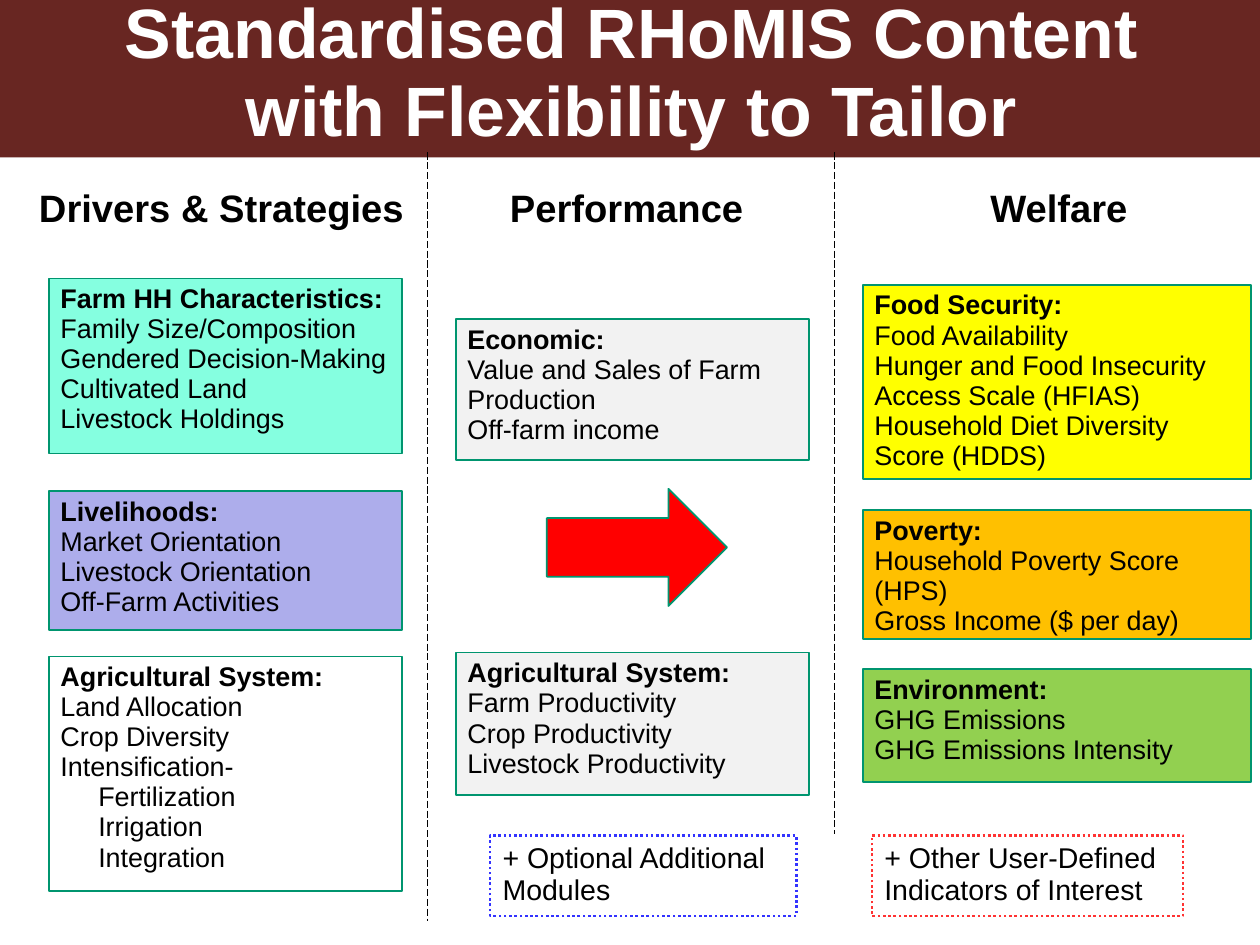
import pptx
import pptx.util
import pptx.dml.color
import pptx.enum.dml
import pptx.enum.shapes
import pptx.enum.text
import pptx.oxml.ns
import lxml.etree

Inches = pptx.util.Inches
SHAPES = pptx.enum.shapes.MSO_SHAPE
DASHES = pptx.enum.dml.MSO_LINE
ALIGN = pptx.enum.text.PP_ALIGN
FONT = "Arial"
GREEN = "00956F"
BLACK = "000000"
LEFT, MIDDLE, RIGHT = (0.39, 2.8), (3.62, 2.8), (6.85, 3.08)  # column left, width

# column, top, height, fill, heading, lines, indented lines
TOPICS = [
    (LEFT, 2.21, 1.39, "85FFE0", "Farm HH Characteristics:",
     ["Family Size/Composition", "Gendered Decision-Making",
      "Cultivated Land", "Livestock Holdings"], []),
    (LEFT, 3.9, 1.1, "ADADEB", "Livelihoods:",
     ["Market Orientation", "Livestock Orientation", "Off-Farm Activities"], []),
    (LEFT, 5.21, 1.86, "FFFFFF", "Agricultural System:",
     ["Land Allocation", "Crop Diversity", "Intensification-"],
     ["Fertilization", "Irrigation", "Integration"]),
    (MIDDLE, 2.53, 1.12, "F2F2F2", "Economic:",
     ["Value and Sales of Farm Production", "Off-farm income"], []),
    (MIDDLE, 5.18, 1.13, "F2F2F2", "Agricultural System:",
     ["Farm Productivity", "Crop Productivity", "Livestock Productivity"], []),
    (RIGHT, 2.26, 1.54, "FFFF00", "Food Security:",
     ["Food Availability", "Hunger and Food Insecurity Access Scale (HFIAS)",
      "Household Diet Diversity Score (HDDS)"], []),
    (RIGHT, 4.05, 1.02, "FFC000", "Poverty:",
     ["Household Poverty Score (HPS)", "Gross Income ($ per day)"], []),
    (RIGHT, 5.31, 0.9, "92D050", "Environment:",
     ["GHG Emissions", "GHG Emissions Intensity"], []),
]


def color(value):
    return pptx.dml.color.RGBColor.from_string(value)


def set_text(box, lines, size, inset, align=ALIGN.LEFT, bold=False, ink=BLACK):
    """Fill a box with top-anchored paragraphs in one style."""
    frame = box.text_frame
    frame.word_wrap = True
    frame.auto_size = pptx.enum.text.MSO_AUTO_SIZE.NONE
    frame.vertical_anchor = pptx.enum.text.MSO_ANCHOR.TOP
    frame.margin_left = frame.margin_right = Inches(inset[0])
    frame.margin_top = frame.margin_bottom = Inches(inset[1])
    frame.text = "\n".join(lines)
    for para in frame.paragraphs:
        para.alignment = align
        para.line_spacing = 0.93
        for span in para.runs:
            span.font.name = FONT
            span.font.size = pptx.util.Pt(size)
            span.font.bold = bold
            span.font.color.rgb = color(ink)
    return frame.paragraphs


def add_block(page, kind, area, fill=None, line=None, width=1):
    box = page.shapes.add_shape(kind, *map(Inches, area))
    box.shadow.inherit = False
    if fill:
        box.fill.solid()
        box.fill.fore_color.rgb = color(fill)
    else:
        box.fill.background()
    if line:
        box.line.color.rgb = color(line)
        box.line.width = pptx.util.Pt(width)
    else:
        box.line.fill.background()
    return box


def add_title(page, lines):
    band = add_block(page, SHAPES.RECTANGLE, (0, 0, 10, 1.25), "682622")
    title = page.shapes.title
    title.element.addprevious(band.element)  # band lies behind the title
    title.left, title.top, title.width, title.height = map(
        Inches, (0.04, -0.07, 9.95, 1.37))
    set_text(title, lines, 39.9, (0.08, 0.04), ALIGN.CENTER, True, "FFFFFF")


def add_heading(page, left, width, text):
    box = page.shapes.add_textbox(*map(Inches, (left, 1.45, width, 0.46)))
    set_text(box, [text], 21.8, (0.09, 0.05), ALIGN.CENTER, True)


def add_topic(page, column, top, height, fill, heading, lines, indented):
    left, width = column
    box = add_block(page, SHAPES.RECTANGLE, (left, top, width, height), fill, GREEN)
    paras = set_text(box, [heading] + lines + indented, 15.4, (0.09, 0.05))
    paras[0].runs[0].font.bold = True
    for para in paras[1 + len(lines):]:
        para._p.get_or_add_pPr().set("marL", str(Inches(0.3)))


def add_option(page, left, width, line, text):
    box = add_block(page, SHAPES.RECTANGLE, (left, 6.63, width, 0.64),
                    line=line, width=1.5)
    box.line.dash_style = DASHES.ROUND_DOT
    set_text(box, [text], 16.3, (0.1, 0.06))


def add_divider(page, x, bottom):
    divider = page.shapes.add_connector(
        pptx.enum.shapes.MSO_CONNECTOR.STRAIGHT,
        *map(Inches, (x, 1.21, x, bottom)))
    divider.line.color.rgb = color(BLACK)
    divider.line.width = pptx.util.Pt(0.5)
    divider.line.dash_style = DASHES.LONG_DASH
    lxml.etree.SubElement(divider.element.spPr, pptx.oxml.ns.qn("a:effectLst"))


def main():
    deck = pptx.Presentation()
    deck.slide_width, deck.slide_height = Inches(10), Inches(7.5)
    page = deck.slides.add_slide(deck.slide_layouts.get_by_name("Title Only"))

    # Title and column headings
    add_title(page, ["Standardised RHoMIS Content", "with Flexibility to Tailor"])
    add_heading(page, -0.07, 3.66, "Drivers & Strategies")
    add_heading(page, 3.16, 3.63, "Performance")
    add_heading(page, 6.7, 3.41, "Welfare")

    # Topic boxes and the arrow between the columns
    for topic in TOPICS:
        add_topic(page, *topic)
    add_block(page, SHAPES.RIGHT_ARROW, (4.34, 3.88, 1.43, 0.93), "FF0000", GREEN)

    # Column dividers
    add_divider(page, 3.39, 7.31)
    add_divider(page, 6.62, 6.62)

    # Optional extras
    add_option(page, 3.89, 2.43, "3333FF", "+ Optional Additional Modules")
    add_option(page, 6.92, 2.47, "FF3333",
               "+ Other User-Defined Indicators of Interest")

    deck.save("out.pptx")


if __name__ == "__main__":
    main()
